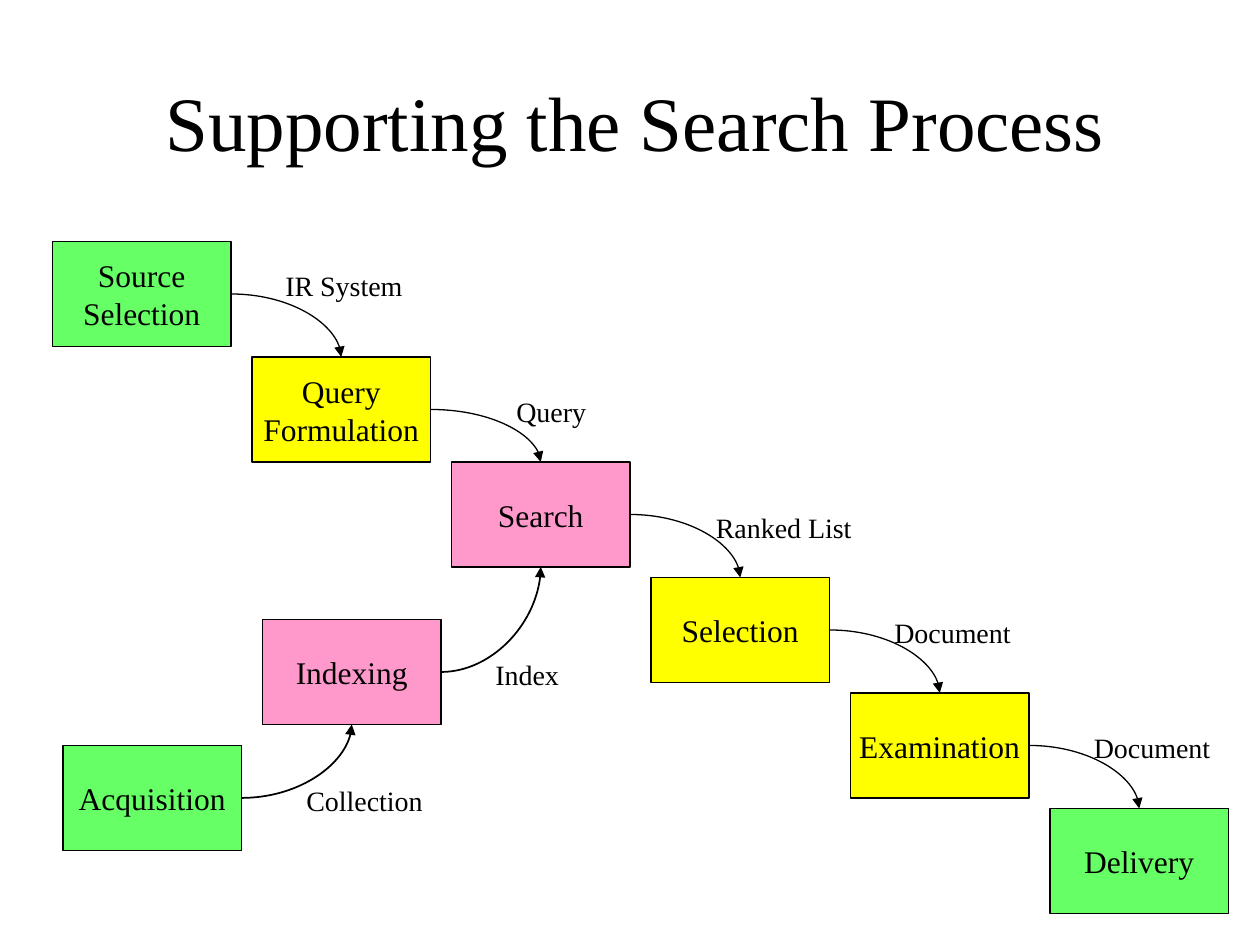
from lxml import etree
from pptx import Presentation
from pptx.dml.color import RGBColor
from pptx.enum.shapes import MSO_CONNECTOR, MSO_SHAPE
from pptx.enum.text import MSO_ANCHOR, PP_ALIGN
from pptx.oxml.ns import qn
from pptx.util import Pt

CURVE, RECT = MSO_CONNECTOR.CURVE, MSO_SHAPE.RECTANGLE
MIDDLE, TOP = MSO_ANCHOR.MIDDLE, MSO_ANCHOR.TOP
LEFT, CENTER = PP_ALIGN.LEFT, PP_ALIGN.CENTER
TOP_SIDE, BOTTOM_SIDE, RIGHT_SIDE = 0, 2, 3

FONT = "Times New Roman"
BLACK, GREEN, YELLOW, PINK = "000000", "66FF66", "FFFF00", "FF99CC"
BOX_W, BOX_H, LABEL_H = 102, 60, 27
STEP = 114  # from one column of boxes to the next

TITLE = "Supporting the Search Process"

# text, fill, top
SEARCH_STEPS = [
    ("Source\nSelection", GREEN, 138),
    ("Query\nFormulation", YELLOW, 204),
    ("Search", PINK, 264),
    ("Selection", YELLOW, 330),
    ("Examination", YELLOW, 396),
    ("Delivery", GREEN, 462),
]
INDEX_STEPS = [
    ("Acquisition", GREEN, 426),
    ("Indexing", PINK, 354),
]

# text, left, top, width
SEARCH_LABELS = [
    ("IR System", 156, 150, 82),
    ("Query", 288, 222, 55),
    ("Ranked List", 402, 288, 92),
    ("Document", 504, 348, 81),
    ("Document", 618, 414, 81),
]
INDEX_LABELS = [
    ("Collection", 168, 444, 81),
    ("Index", 276, 372, 51),
]


def color(code):
    return RGBColor.from_string(code)


def write(shape, text, size=18, align=CENTER, anchor=MIDDLE, wrap=False):
    frame = shape.text_frame
    frame.text = text
    frame.word_wrap = wrap
    frame.vertical_anchor = anchor
    for para in frame.paragraphs:
        para.alignment = align
        for run in para.runs:
            run.font.name = FONT
            run.font.size = Pt(size)
            run.font.color.rgb = color(BLACK)


def add_box(shapes, text, fill, left, top):
    box = shapes.add_shape(RECT, Pt(left), Pt(top), Pt(BOX_W), Pt(BOX_H))
    box.shadow.inherit = False
    box.fill.solid()
    box.fill.fore_color.rgb = color(fill)
    box.line.color.rgb = color(BLACK)
    box.line.width = Pt(0.75)
    write(box, text)
    return box


def add_arrow(shapes, start, end, side, width):
    """Join the right of one box to a side of the next with a quarter curve."""
    arrow = shapes.add_connector(CURVE, 0, 0, 0, 0)
    arrow.begin_connect(start, RIGHT_SIDE)
    arrow.end_connect(end, side)
    arrow.line.color.rgb = color(BLACK)
    arrow.line.width = Pt(width)
    props = arrow._element.spPr
    props.find(qn("a:prstGeom")).set("prst", "curvedConnector2")
    etree.SubElement(props.find(qn("a:ln")), qn("a:tailEnd"), type="triangle")
    etree.SubElement(props, qn("a:effectLst"))


def add_chain(shapes, steps, labels, left, side, width, last=None):
    """Draw boxes column by column, with a labelled arrow from each to the next."""
    boxes = [add_box(shapes, text, fill, left + i * STEP, top)
             for i, (text, fill, top) in enumerate(steps)]
    ends = boxes + ([last] if last else [])
    for start, end in zip(ends, ends[1:]):
        add_arrow(shapes, start, end, side, width)
    for text, x, y, w in labels:
        label = shapes.add_textbox(Pt(x), Pt(y), Pt(w), Pt(LABEL_H))
        write(label, text, size=16, align=LEFT, anchor=TOP)
    return boxes


def main():
    deck = Presentation()
    deck.slide_width, deck.slide_height = Pt(720), Pt(540)
    shapes = deck.slides.add_slide(deck.slide_layouts[5]).shapes

    title = shapes.title
    title.left, title.top = Pt(42), Pt(24)
    title.width, title.height = Pt(642), Pt(90)
    write(title, TITLE, size=44, wrap=True)

    boxes = add_chain(shapes, SEARCH_STEPS, SEARCH_LABELS, 30, TOP_SIDE, 0.75)
    search = boxes[2]
    add_chain(shapes, INDEX_STEPS, INDEX_LABELS, 36, BOTTOM_SIDE, 1, last=search)

    deck.save("out.pptx")


if __name__ == "__main__":
    main()
